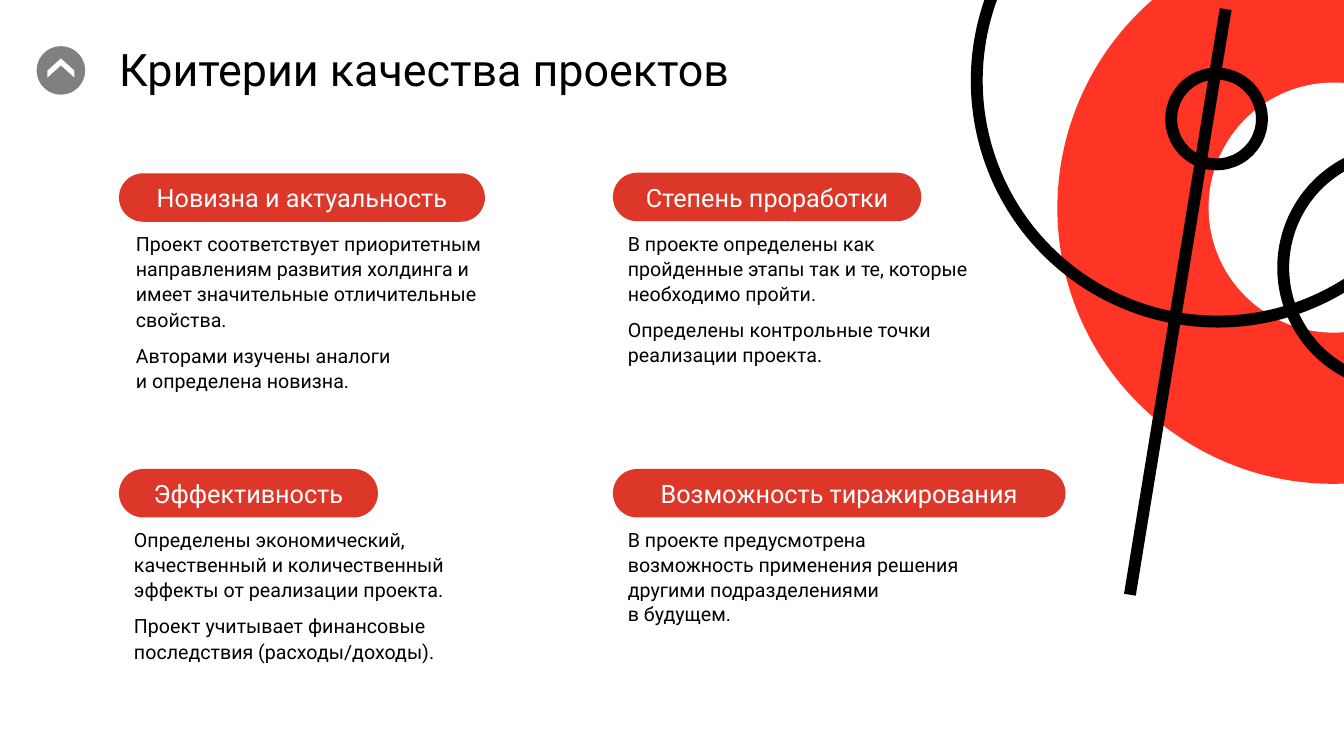
from dataclasses import dataclass

from lxml import etree
from pptx import Presentation
from pptx.dml.color import RGBColor
from pptx.enum.shapes import MSO_CONNECTOR, MSO_SHAPE
from pptx.enum.text import MSO_ANCHOR, MSO_AUTO_SIZE, PP_ALIGN
from pptx.oxml.ns import qn
from pptx.util import Pt

LEFT, CENTER = PP_ALIGN.LEFT, PP_ALIGN.CENTER
TOP, MIDDLE = MSO_ANCHOR.TOP, MSO_ANCHOR.MIDDLE
NO_AUTOFIT = MSO_AUTO_SIZE.NONE
ELLIPSE, PILL, CHEVRON = MSO_SHAPE.OVAL, MSO_SHAPE.ROUNDED_RECTANGLE, MSO_SHAPE.CHEVRON
STRAIGHT = MSO_CONNECTOR.STRAIGHT

BLACK = RGBColor(0x00, 0x00, 0x00)
WHITE = RGBColor(0xFF, 0xFF, 0xFF)
GRAY = RGBColor(0x80, 0x80, 0x80)
PILL_RED = RGBColor(0xDC, 0x37, 0x29)
RING_RED = RGBColor(0xFE, 0x34, 0x24)

FONT = "Roboto"
STROKE = 8.5
PILL_HEIGHT = 34.6
BODY_OFFSET = 37.2


@dataclass(frozen=True)
class Line:
    text: str
    spacing: float = 1.07
    after: float = 8


@dataclass(frozen=True)
class Criterion:
    heading: str
    left: float
    top: float
    pill_width: float
    body_left: float
    body_width: float
    body_height: float
    lines: tuple[Line, ...]


@dataclass(frozen=True)
class Circle:
    left: float
    top: float
    diameter: float
    fill: RGBColor | None = None


CRITERIA = (
    Criterion("Новизна и актуальность", 85, 123.8, 261.4, 90, 262.8, 142.6, (
        Line("Проект соответствует приоритетным направлениям развития холдинга "
             "и имеет значительные отличительные свойства."),
        Line("Авторами изучены аналоги", after=0),
        Line("и определена новизна.", after=0))),
    Criterion("Степень проработки", 437.8, 123.4, 220.3, 441.4, 275, 105.1, (
        Line("В проекте определены как пройденные этапы так и те, которые "
             "необходимо пройти."),
        Line("Определены контрольные точки реализации проекта."))),
    Criterion("Эффективность", 85, 335, 185, 88.6, 252.7, 124.6, (
        Line("Определены экономический, качественный и количественный эффекты "
             "от реализации проекта."),
        Line("Проект учитывает финансовые последствия (расходы/доходы)."))),
    Criterion("Возможность тиражирования", 437.8, 335, 323.3, 441.4, 266, 78.5, (
        Line("В проекте предусмотрена возможность применения решения "
             "другими подразделениями", after=0),
        Line("в будущем.", spacing=1, after=0))),
)

DECOR_CIRCLES = (
    Circle(755.3, -48.2, 393.8, RING_RED),
    Circle(863.3, 59, 178.6, WHITE),
    Circle(916.6, 107.3, 167.8),
    Circle(697.7, -114.5, 344.2),
    Circle(836.6, 52.6, 64.8),
)


def add_run(paragraph, text: str, size: float, color: RGBColor) -> None:
    run = paragraph.add_run()
    run.text = text
    run.font.name = FONT
    run.font.size = Pt(size)
    run.font.color.rgb = color


def add_filled(slide, kind, left: float, top: float, width: float, height: float,
               color: RGBColor):
    shape = slide.shapes.add_shape(kind, Pt(left), Pt(top), Pt(width), Pt(height))
    shape.shadow.inherit = False
    shape.fill.solid()
    shape.fill.fore_color.rgb = color
    shape.line.fill.background()
    return shape


def add_circle(slide, circle: Circle) -> None:
    shape = add_filled(slide, ELLIPSE, circle.left, circle.top, circle.diameter,
                       circle.diameter, circle.fill or BLACK)
    if circle.fill is None:
        shape.fill.background()
        shape.line.color.rgb = BLACK
        shape.line.width = Pt(STROKE)


def add_title(slide, text: str) -> None:
    title = slide.shapes.title
    title.left, title.top, title.width, title.height = Pt(77.8), Pt(15.8), Pt(861.8), Pt(70.6)
    frame = title.text_frame
    frame.auto_size = NO_AUTOFIT
    frame.vertical_anchor = MIDDLE
    paragraph = frame.paragraphs[0]
    paragraph.alignment = LEFT
    paragraph.line_spacing = 0.9
    add_run(paragraph, text, 32, BLACK)


def add_criterion(slide, criterion: Criterion) -> None:
    # Heading pill
    pill = add_filled(slide, PILL, criterion.left, criterion.top,
                      criterion.pill_width, PILL_HEIGHT, PILL_RED)
    pill.adjustments[0] = 0.5
    frame = pill.text_frame
    frame.word_wrap = False
    frame.vertical_anchor = MIDDLE
    frame.paragraphs[0].alignment = CENTER
    add_run(frame.paragraphs[0], criterion.heading, 18, WHITE)

    # Description
    box = slide.shapes.add_textbox(
        Pt(criterion.body_left), Pt(criterion.top + BODY_OFFSET),
        Pt(criterion.body_width), Pt(criterion.body_height))
    frame = box.text_frame
    frame.word_wrap = True
    frame.vertical_anchor = TOP
    for index, line in enumerate(criterion.lines):
        paragraph = frame.add_paragraph() if index else frame.paragraphs[0]
        paragraph.line_spacing = line.spacing
        paragraph.space_after = Pt(line.after)
        add_run(paragraph, line.text, 14, BLACK)


def add_decor(slide) -> None:
    for circle in DECOR_CIRCLES:
        add_circle(slide, circle)
    bar = slide.shapes.add_connector(STRAIGHT, Pt(875.5), Pt(6.5), Pt(807.1), Pt(424.8))
    bar.line.color.rgb = BLACK
    bar.line.width = Pt(STROKE)
    etree.SubElement(bar._element.spPr, qn("a:effectLst"))


def main() -> None:
    presentation = Presentation()
    presentation.slide_width, presentation.slide_height = Pt(960), Pt(540)
    slide = presentation.slides.add_slide(presentation.slide_layouts[5])

    add_title(slide, "Критерии качества проектов")
    for criterion in CRITERIA:
        add_criterion(slide, criterion)

    # Round badge with an upward chevron
    add_circle(slide, Circle(26.2, 33, 34.6, GRAY))
    chevron = add_filled(slide, CHEVRON, 36.7, 38.9, 13.7, 19.4, WHITE)
    chevron.adjustments[0] = 0.64
    chevron.rotation = 270

    add_decor(slide)
    presentation.save("out.pptx")


if __name__ == "__main__":
    main()
